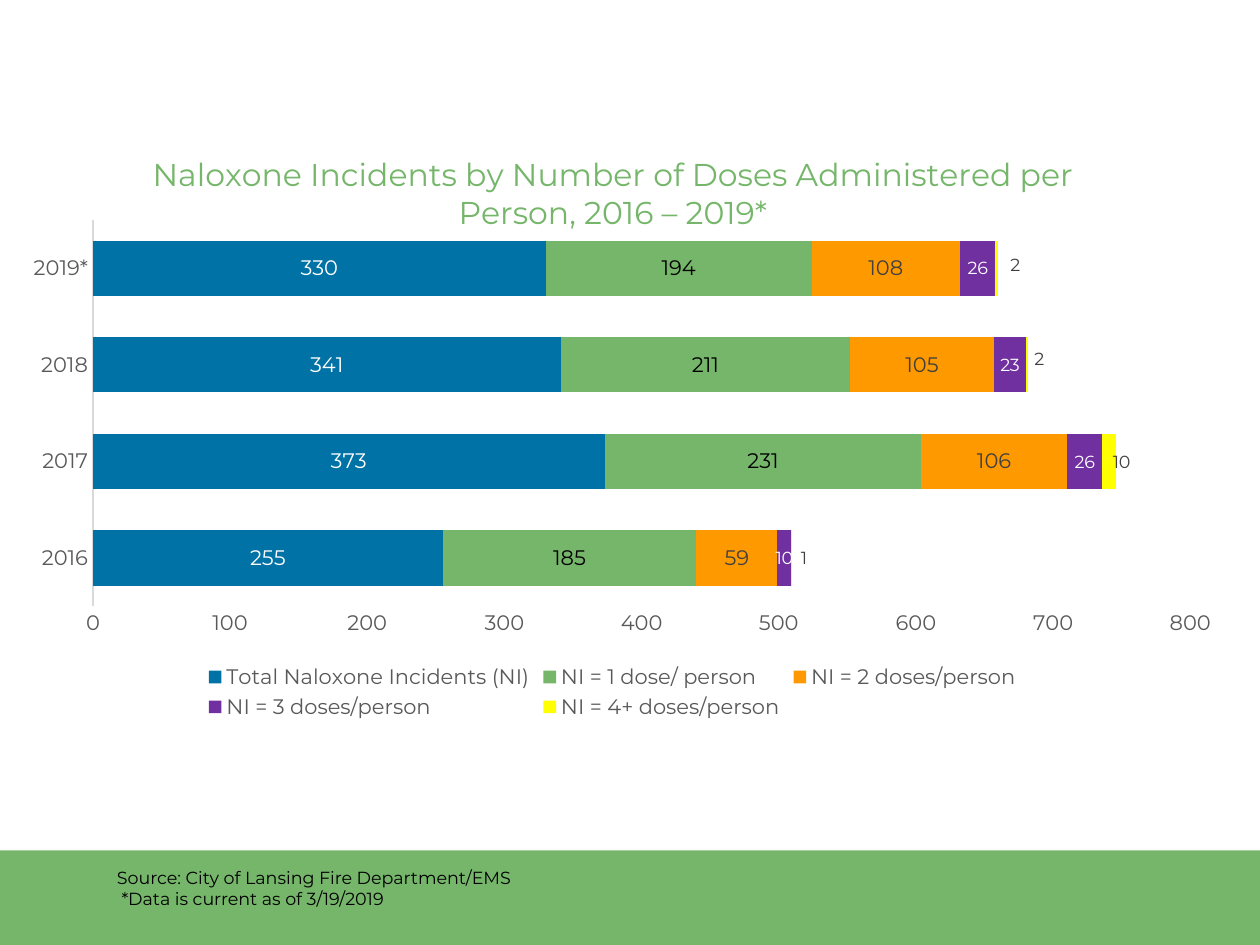
from lxml.etree import SubElement, Element
from pptx import Presentation
from pptx.chart.data import CategoryChartData
from pptx.dml.color import RGBColor
from pptx.enum.chart import XL_CHART_TYPE, XL_LABEL_POSITION, XL_LEGEND_POSITION, XL_TICK_MARK
from pptx.enum.shapes import MSO_SHAPE
from pptx.oxml.ns import qn
from pptx.util import Inches, Pt

FONT = "Montserrat"
BLACK = RGBColor(0x00, 0x00, 0x00)
WHITE = RGBColor(0xFF, 0xFF, 0xFF)
DARK_GRAY = RGBColor(0x40, 0x40, 0x40)
GRAY = RGBColor(0x59, 0x59, 0x59)
LIGHT_GRAY = RGBColor(0xD9, 0xD9, 0xD9)
BLUE = RGBColor(0x00, 0x72, 0xA6)
GREEN = RGBColor(0x75, 0xB6, 0x6A)
ORANGE = RGBColor(0xFF, 0x99, 0x00)
PURPLE = RGBColor(0x70, 0x30, 0xA0)
YELLOW = RGBColor(0xFF, 0xFF, 0x00)

TITLE = "Naloxone Incidents by Number of Doses Administered per Person, 2016 – 2019*"
YEARS = ("2016", "2017", "2018", "2019*")
# Name, values, bar colour, label colour, label size
SERIES = (
    ("Total Naloxone Incidents (NI)", (255, 373, 341, 330), BLUE, WHITE, 12),
    ("NI = 1 dose/ person", (185, 231, 211, 194), GREEN, BLACK, 12),
    ("NI = 2 doses/person", (59, 106, 105, 108), ORANGE, DARK_GRAY, 12),
    ("NI = 3 doses/person", (10, 26, 23, 26), PURPLE, WHITE, 10),
    ("NI = 4+ doses/person", (1, 10, 2, 2), YELLOW, DARK_GRAY, 10),
)
# Shifts of the last series' labels, as fractions of the chart size
LABEL_SHIFTS = ((0.01, 0), (0.01, 0), (0.01, -0.01), (0.015, -0.005))


def style_font(font, size, color):
    font.name = FONT
    font.size = Pt(size)
    font.bold = False
    font.color.rgb = color


def set_layout(parent, index, **settings):
    """Give a chart part a manual layout, as its child number index."""
    for old in parent.findall(qn("c:layout")):
        parent.remove(old)
    layout = Element(qn("c:layout"))
    manual = SubElement(layout, qn("c:manualLayout"))
    for name, value in settings.items():
        SubElement(manual, qn(f"c:{name}")).set("val", str(value))
    parent.insert(index, layout)


def add_band(page):
    band = page.shapes.add_shape(
        MSO_SHAPE.RECTANGLE, Inches(0), Inches(6.75), Inches(10), Inches(0.76))
    band.shadow.inherit = False
    band.fill.solid()
    band.fill.fore_color.rgb = GREEN
    band.line.fill.background()


def add_source(page):
    box = page.shapes.add_textbox(Inches(0.83), Inches(6.83), Inches(8.08), Inches(1.08))
    frame = box.text_frame
    frame.word_wrap = True
    frame.text = "Source: City of Lansing Fire Department/EMS\n *Data is current as of 3/19/2019"
    for paragraph in frame.paragraphs:
        style_font(paragraph.font, 10, BLACK)


def add_title(chart):
    chart.has_title = True
    title = chart.chart_title
    title.include_in_layout = False
    title.text_frame.text = TITLE
    style_font(title.text_frame.paragraphs[0].font, 18, GREEN)
    set_layout(title._element, 1, xMode="edge", yMode="edge", x=0.12, y=0.05)


def style_axes(chart):
    for axis in (chart.category_axis, chart.value_axis):
        axis.major_tick_mark = XL_TICK_MARK.NONE
        axis.minor_tick_mark = XL_TICK_MARK.NONE
        axis.has_major_gridlines = False
        style_font(axis.tick_labels.font, 12, GRAY)
    chart.category_axis.format.line.color.rgb = LIGHT_GRAY
    chart.category_axis.format.line.width = Pt(0.75)
    chart.value_axis.format.line.fill.background()
    chart.value_axis.minimum_scale = 0
    chart.value_axis.maximum_scale = 800
    chart.value_axis.major_unit = 100


def style_series(series, color, label_color, label_size):
    series.format.fill.solid()
    series.format.fill.fore_color.rgb = color
    series.invert_if_negative = False
    labels = series.data_labels
    labels.show_value = True
    labels.position = XL_LABEL_POSITION.CENTER
    style_font(labels.font, label_size, label_color)


def shift_labels(series, color, size):
    for number, _ in enumerate(LABEL_SHIFTS):
        label = series.points[number].data_label
        style_font(label.font, size, color)
        label.position = XL_LABEL_POSITION.CENTER
    elements = series.data_labels._element.findall(qn("c:dLbl"))
    for element, (x, y) in zip(elements, LABEL_SHIFTS):
        set_layout(element, 1, x=x, y=y)


def add_incident_chart(page):
    data = CategoryChartData()
    data.categories = YEARS
    for name, values, *_ in SERIES:
        data.add_series(name, values)
    chart = page.shapes.add_chart(
        XL_CHART_TYPE.BAR_STACKED, Inches(0), Inches(0.92),
        Inches(9.72), Inches(4.83), data).chart
    style_font(chart.font, 10, BLACK)
    add_title(chart)
    style_axes(chart)

    plot = chart.plots[0]
    plot.gap_width = 75
    plot.overlap = 100
    plot.vary_by_categories = False
    for series, (_, _, *style) in zip(plot.series, SERIES):
        style_series(series, *style)
    shift_labels(plot.series[-1], DARK_GRAY, 10)

    chart.has_legend = True
    chart.legend.position = XL_LEGEND_POSITION.BOTTOM
    chart.legend.include_in_layout = False
    style_font(chart.legend.font, 12, GRAY)
    plot_area = chart._chartSpace.find(".//" + qn("c:plotArea"))
    set_layout(plot_area, 0, layoutTarget="inner", xMode="edge", yMode="edge",
               x=0.076, y=0.171, w=0.896, h=0.635)


def main():
    deck = Presentation()
    deck.slide_width = Inches(10)
    deck.slide_height = Inches(7.5)
    page = deck.slides.add_slide(deck.slide_layouts[6])
    add_band(page)
    add_incident_chart(page)
    add_source(page)
    deck.save("out.pptx")


if __name__ == "__main__":
    main()
